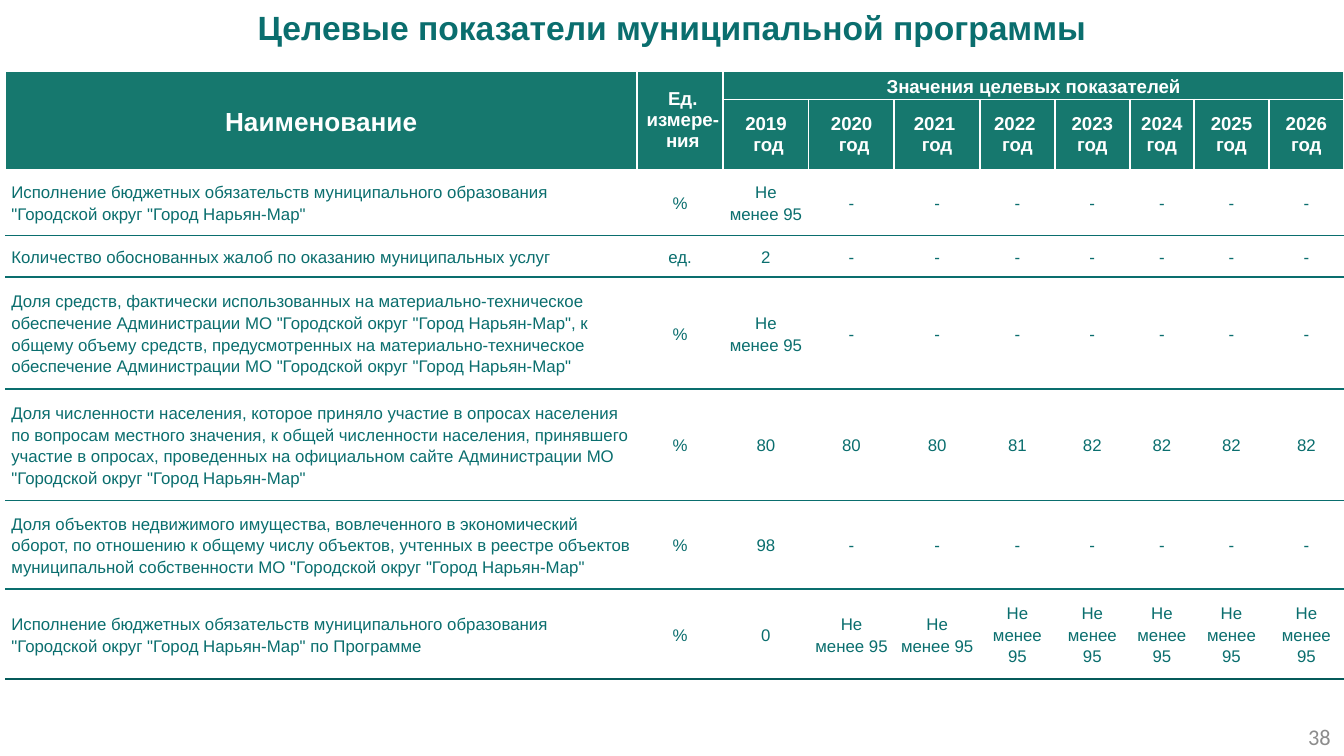
from lxml.etree import SubElement
from pptx import Presentation
from pptx.dml.color import RGBColor
from pptx.enum.text import MSO_ANCHOR, PP_ALIGN
from pptx.oxml.ns import qn
from pptx.util import Inches, Pt

TEAL, DARK, HEAD, WHITE, GREY = "0A6E6E", "055A5A", "16786E", "FFFFFF", "8C8C8C"
WIDTH, NAME, UNIT = 9.96, 4.7, 0.64
SHARES = [0.64] * 3 + [0.56, 0.56, 0.48, 0.56, 0.56]
SCALE = (WIDTH - NAME - UNIT) / sum(SHARES)
COLS = [NAME, UNIT] + [share * SCALE for share in SHARES]
HEIGHTS = [0.21, 0.52, 0.49, 0.31, 0.83, 0.83, 0.66, 0.67]
YEARS = ["2019 \nгод", "2020 \nгод", "2021 \nгод", "2022 \nгод"] + [
    f"{year} год" for year in range(2023, 2027)
]
LEAST = "Не менее 95"
ROWS = [
    ('Исполнение бюджетных обязательств муниципального образования "Городской округ "Город Нарьян-Мар"',
     "%", [LEAST] + ["-"] * 7),
    ("Количество обоснованных жалоб по оказанию муниципальных услуг", "ед.", ["2"] + ["-"] * 7),
    ('Доля средств, фактически использованных на материально-техническое обеспечение '
     'Администрации МО "Городской округ "Город Нарьян-Мар", к общему объему средств, '
     'предусмотренных на материально-техническое обеспечение Администрации МО '
     '"Городской округ "Город Нарьян-Мар"',
     "%", [LEAST] + ["-"] * 7),
    ('Доля численности населения, которое приняло участие в опросах населения по вопросам '
     'местного значения, к общей численности населения, принявшего участие в опросах, '
     'проведенных на официальном сайте Администрации МО "Городской округ "Город Нарьян-Мар"',
     "%", ["80"] * 3 + ["81"] + ["82"] * 4),
    ('Доля объектов недвижимого имущества, вовлеченного в экономический оборот, по отношению '
     'к общему числу объектов, учтенных в реестре объектов муниципальной собственности МО '
     '"Городской округ "Город Нарьян-Мар"',
     "%", ["98"] + ["-"] * 7),
    ('Исполнение бюджетных обязательств муниципального образования '
     '"Городской округ "Город Нарьян-Мар" по Программе',
     "%", ["0"] + [LEAST] * 7),
]


def color(code):
    """Turn a hex string into a colour."""
    return RGBColor.from_string(code)


def write(frame, text, size=9, tint=TEAL, bold=False, font="Arial",
          align=PP_ALIGN.CENTER, space=None, indent=0):
    """Fill a text frame, one paragraph for each line."""
    frame.word_wrap = True
    for i, line in enumerate(text.split("\n")):
        para = frame.paragraphs[0] if i == 0 else frame.add_paragraph()
        run = para.add_run()
        run.text = line
        run.font.size, run.font.bold, run.font.name = Pt(size), bold, font
        run.font.color.rgb = color(tint)
        para.alignment = align
        if space:
            para.line_spacing = space
        if indent:
            para._p.get_or_add_pPr().set("marL", str(Inches(indent)))


def edge(cell, **sides):
    """Draw the given cell sides and hide the others."""
    props = cell._tc.get_or_add_tcPr()
    for side in "LRTB":
        line = SubElement(props, qn(f"a:ln{side}"), w=str(Pt(1)))
        if side in sides:
            fill = SubElement(line, qn("a:solidFill"))
            SubElement(fill, qn("a:srgbClr"), val=sides[side])
        else:
            SubElement(line, qn("a:noFill"))


def pad(cell, across, down):
    """Set the cell margins in points and centre its text vertically."""
    cell.margin_left = cell.margin_right = Pt(across)
    cell.margin_top = cell.margin_bottom = Pt(down)
    cell.vertical_anchor = MSO_ANCHOR.MIDDLE


def header(table):
    """Build the two merged header rows."""
    for row in range(2):
        for col in range(len(COLS)):
            cell = table.cell(row, col)
            pad(cell, 0.7, 0.7)
            edge(cell, L=WHITE, R=WHITE, T=WHITE, B=WHITE)
            cell.fill.solid()
            cell.fill.fore_color.rgb = color(HEAD)
    for col in range(2):
        table.cell(0, col).merge(table.cell(1, col))
    table.cell(0, 2).merge(table.cell(0, len(COLS) - 1))
    look = dict(tint=WHITE, bold=True)
    write(table.cell(0, 0).text_frame, "Наименование", size=14, space=1.15, **look)
    write(table.cell(0, 1).text_frame, "Ед. измере-ния", size=10, indent=0.04, **look)
    write(table.cell(0, 2).text_frame, "Значения целевых показателей", size=10, space=1.15, **look)
    for col, year in enumerate(YEARS, 2):
        write(table.cell(1, col).text_frame, year, size=10,
              indent=0.04 if col < 4 else 0, **look)


def body(table):
    """Fill the indicator rows, ruled below."""
    for row, (name, unit, values) in enumerate(ROWS, 2):
        rules = {"B": DARK if row == len(ROWS) + 1 else TEAL}
        if row > 2:
            rules["T"] = TEAL
        for col, text in enumerate([name, unit, *values]):
            cell = table.cell(row, col)
            pad(cell, 3.2, 3.2 if col == 1 else 5)
            edge(cell, **rules)
            cell.fill.background()
            write(cell.text_frame, text, space=1.15,
                  align=PP_ALIGN.CENTER if col else PP_ALIGN.LEFT)


def grid(slide, left, top):
    """Place the table of indicators."""
    frame = slide.shapes.add_table(len(HEIGHTS), len(COLS), Inches(left), Inches(top),
                                   Inches(WIDTH), Inches(sum(HEIGHTS)))
    table = frame.table
    table.horz_banding = False
    for col, width in zip(table.columns, COLS):
        col.width = Inches(width)
    for row, height in zip(table.rows, HEIGHTS):
        row.height = Inches(height)
    header(table)
    body(table)


def title(slide, left, top, width, height):
    """Place the slide title."""
    shape = slide.shapes.title
    shape.left, shape.top = Inches(left), Inches(top)
    shape.width, shape.height = Inches(width), Inches(height)
    shape.text_frame.vertical_anchor = MSO_ANCHOR.MIDDLE
    write(shape.text_frame, "Целевые показатели муниципальной программы", size=18, bold=True)


def number(slide, left, top, width, height):
    """Place the page number."""
    box = slide.shapes.add_textbox(Inches(left), Inches(top), Inches(width), Inches(height))
    box.text_frame.vertical_anchor = MSO_ANCHOR.MIDDLE
    write(box.text_frame, "38", size=12, tint=GREY, font="Calibri", align=PP_ALIGN.RIGHT)


def main():
    """Build and save the slide."""
    deck = Presentation()
    deck.slide_width = Inches(10)
    deck.slide_height = deck.slide_width * 9 // 16
    slide = deck.slides.add_slide(deck.slide_layouts[5])
    number(slide, 7.67, 5.33, 2.33, 0.3)
    title(slide, 0, 0, 10, 0.4)
    grid(slide, 0.04, 0.53)
    deck.save("out.pptx")


if __name__ == "__main__":
    main()
